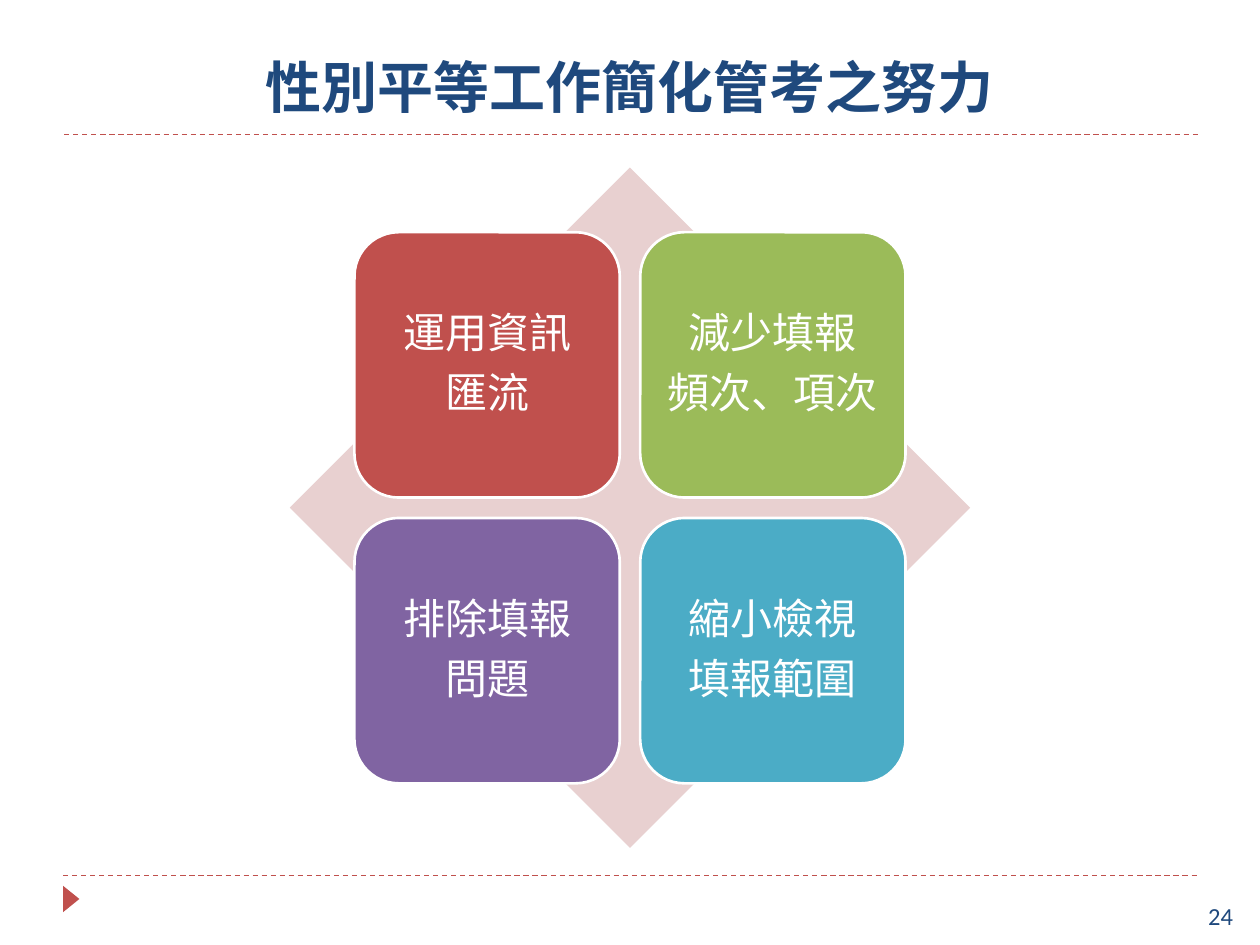
from lxml.etree import SubElement
from pptx import Presentation
from pptx.dml.color import RGBColor
from pptx.enum.dml import MSO_LINE
from pptx.enum.shapes import MSO_CONNECTOR, MSO_SHAPE
from pptx.enum.text import MSO_ANCHOR, PP_ALIGN
from pptx.oxml.ns import qn
from pptx.util import Inches, Pt

WIDTH, HEIGHT = 10, 7.5
RED, NAVY, WHITE = "C0504D", "1F497D", "FFFFFF"
EFFORTS = [
    ("運用資訊\n匯流", RED),
    ("減少填報\n頻次、項次", "9BBB59"),
    ("排除填報\n問題", "8064A2"),
    ("縮小檢視\n填報範圍", "4BACC6"),
]


def color(value):
    return RGBColor.from_string(value)


def write(frame, text, *, size, font, ink, bold=False, align=PP_ALIGN.LEFT,
          anchor=MSO_ANCHOR.TOP, inset=None, spacing=None, after=None):
    frame.word_wrap = True
    frame.vertical_anchor = anchor
    if inset is not None:
        frame.margin_left = frame.margin_right = Inches(inset)
        frame.margin_top = frame.margin_bottom = Inches(inset)
    frame.text = text
    for line in frame.paragraphs:
        line.alignment = align
        line.line_spacing = spacing
        line.space_after = after
        line.font.name = font
        line.font.size = Pt(size)
        line.font.bold = bold
        line.font.color.rgb = color(ink)


def add_block(slide, preset, box, fill, outline=None):
    block = slide.shapes.add_shape(preset, *map(Inches, box))
    block.shadow.inherit = False
    block.fill.solid()
    block.fill.fore_color.rgb = color(fill)
    if outline:
        block.line.color.rgb = color(outline)
        block.line.width = Pt(1.5)
    else:
        block.line.fill.background()
    return block


def add_rule(slide, left, top, width):
    rule = slide.shapes.add_connector(
        MSO_CONNECTOR.STRAIGHT, *map(Inches, (left, top, left + width, top)))
    rule.line.color.rgb = color(RED)
    rule.line.width = Pt(0.75)
    rule.line.dash_style = MSO_LINE.DASH
    SubElement(rule._element.spPr, qn("a:effectLst"))


def add_header(slide, left, top, width, height):
    add_rule(slide, left + 0.01, top + height + 0.07, width)
    title = slide.shapes.add_textbox(*map(Inches, (left, top, width, height)))
    write(title.text_frame, "性別平等工作簡化管考之努力", size=32, font="Roboto Slab",
          ink=NAVY, bold=True, align=PP_ALIGN.CENTER, anchor=MSO_ANCHOR.BOTTOM)


def add_footer(slide, left, top, width, height):
    add_rule(slide, left, top, width)
    marker = add_block(slide, MSO_SHAPE.ISOSCELES_TRIANGLE,
                       (left - 0.04, top + 0.12, 0.21, 0.13), RED)
    marker.rotation = 90
    page = slide.shapes.add_textbox(
        *map(Inches, (left + width - 0.01, top + 0.15, 0.51, height - 0.15)))
    write(page.text_frame, "24", size=14, font="Calibri", ink=NAVY)


def add_matrix(slide, left, top, side):
    add_block(slide, MSO_SHAPE.DIAMOND, (left, top, side, side), "E8D0D0")
    margin, tile = side * 0.095, side * 0.39
    step = side - 2 * margin - tile
    for index, (effort, fill) in enumerate(EFFORTS):
        row, column = divmod(index, 2)
        box = (left + margin + column * step, top + margin + row * step, tile, tile)
        card = add_block(slide, MSO_SHAPE.ROUNDED_RECTANGLE, box, fill, WHITE)
        write(card.text_frame, effort, size=24, font="Arial", ink=WHITE,
              align=PP_ALIGN.CENTER, anchor=MSO_ANCHOR.MIDDLE, inset=0,
              spacing=0.9, after=Pt(24 * 0.35))


def main():
    deck = Presentation()
    deck.slide_width, deck.slide_height = Inches(WIDTH), Inches(HEIGHT)
    slide = deck.slides.add_slide(deck.slide_layouts[6])
    side = HEIGHT * 0.72
    edge = WIDTH * 0.05
    add_header(slide, edge, 0.17, WIDTH - 2 * edge, 0.83)
    add_footer(slide, edge, 6.95, WIDTH - 2 * edge, 0.55)
    add_matrix(slide, (WIDTH - side) / 2, 1.33, side)
    deck.save("out.pptx")


if __name__ == "__main__":
    main()
